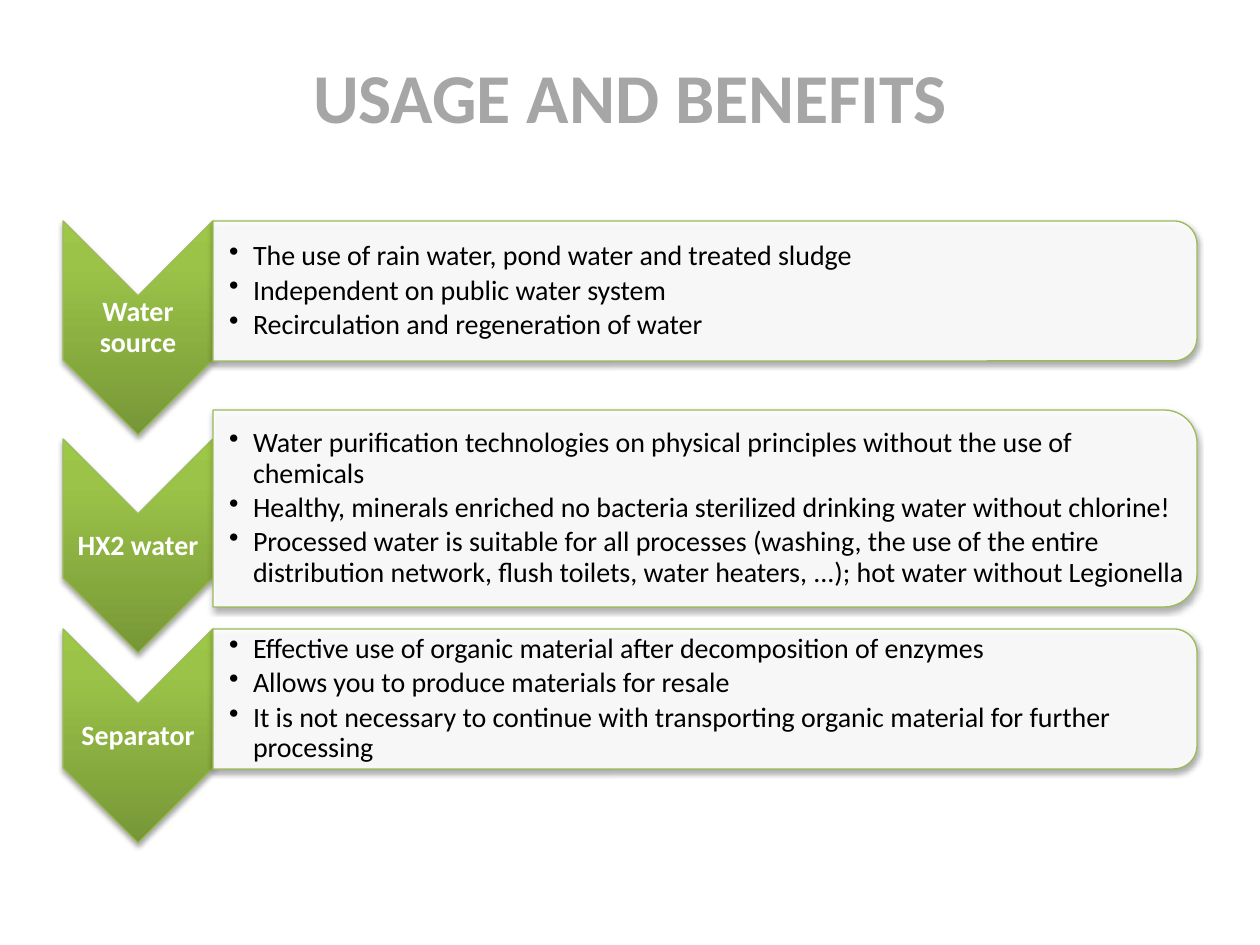
import pptx
import pptx.util
import pptx.dml.color
import pptx.enum.shapes
import pptx.enum.text
import pptx.oxml
import pptx.oxml.ns

RGBColor = pptx.dml.color.RGBColor
MSO_SHAPE = pptx.enum.shapes.MSO_SHAPE
PP_ALIGN = pptx.enum.text.PP_ALIGN
MSO_ANCHOR = pptx.enum.text.MSO_ANCHOR
qn = pptx.oxml.ns.qn
Pt = pptx.util.Pt

GREY = RGBColor(0xA6, 0xA6, 0xA6)
WHITE = RGBColor(0xFF, 0xFF, 0xFF)
BLACK = RGBColor(0x00, 0x00, 0x00)
GREEN = RGBColor(0x9B, 0xBB, 0x59)
GREEN_STOPS = [
    (0, RGBColor(0x77, 0x97, 0x37)),
    (80, RGBColor(0x9B, 0xC3, 0x48)),
    (100, RGBColor(0x9D, 0xC7, 0x46)),
]

PX_PER_INCH = 126
FONT = "Calibri"
NS = pptx.oxml.ns.nsdecls("a")

SHADOW = f"""<a:effectLst {NS}>
  <a:outerShdw blurRad="40000" dist="23000" dir="5400000" rotWithShape="0">
    <a:srgbClr val="{BLACK}"><a:alpha val="35000"/></a:srgbClr>
  </a:outerShdw>
</a:effectLst>"""

GRADIENT = f"""<a:gradFill {NS} rotWithShape="0">
  <a:gsLst>{"".join(
      f'<a:gs pos="{pos * 1000}"><a:srgbClr val="{color}"/></a:gs>'
      for pos, color in GREEN_STOPS)}</a:gsLst>
  <a:lin ang="16200000" scaled="0"/>
</a:gradFill>"""


def px(n):
    return round(n * 914400 / PX_PER_INCH)


class Deck:
    """Holds the style and the current slide."""

    def __init__(self):
        self.prs = pptx.Presentation()
        self.prs.slide_width = px(1260)
        self.prs.slide_height = px(945)
        self.s = self.prs.slides.add_slide(self.prs.slide_layouts[5])

    def font(self, p, size, color, bold=False):
        p.font.name = FONT
        p.font.size = Pt(size)
        p.font.bold = bold
        p.font.color.rgb = color

    def title(self, text, x, y, w, h):
        sp = self.s.shapes.title
        sp.left, sp.top, sp.width, sp.height = px(x), px(y), px(w), px(h)
        sp.text_frame.vertical_anchor = MSO_ANCHOR.MIDDLE
        p = sp.text_frame.paragraphs[0]
        p.text = text
        p.alignment = PP_ALIGN.CENTER
        self.font(p, 40, GREY, bold=True)

    def turned(self, kind, x, y, w, h):
        """Add a shape turned by 90 degrees that covers the given box."""
        sp = self.s.shapes.add_shape(
            kind, px(x + (w - h) / 2), px(y + (h - w) / 2), px(h), px(w))
        sp.rotation = 90
        sp.line.color.rgb = GREEN
        sp.line.width = Pt(0.75)
        sp.shadow.inherit = False
        old = sp._element.spPr.find(qn("a:effectLst"))
        old.getparent().replace(old, pptx.oxml.parse_xml(SHADOW))
        return sp

    def chevron(self, x, y, w, h):
        sp = self.turned(MSO_SHAPE.CHEVRON, x, y, w, h)
        sp.fill.solid()
        solid = sp._element.spPr.find(qn("a:solidFill"))
        solid.getparent().replace(solid, pptx.oxml.parse_xml(GRADIENT))

    def panel(self, x, y, w, h):
        sp = self.turned(MSO_SHAPE.ROUND_2_SAME_RECTANGLE, x, y, w, h)
        sp.fill.solid()
        sp.fill.fore_color.rgb = WHITE
        color = sp._element.spPr.find(qn("a:solidFill"))[0]
        color.append(pptx.oxml.parse_xml(f'<a:alpha {NS} val="90000"/>'))

    def text(self, lines, x, y, w, h, inset, space_after):
        """Add a text box and return its paragraphs."""
        sp = self.s.shapes.add_textbox(px(x), px(y), px(w), px(h))
        tf = sp.text_frame
        tf.word_wrap = True
        tf.vertical_anchor = MSO_ANCHOR.MIDDLE
        tf.margin_left = px(inset)
        tf.margin_right = tf.margin_top = tf.margin_bottom = px(1)
        tf.text = "\n".join(lines)
        for p in tf.paragraphs:
            p.line_spacing = 0.9
            p.space_after = Pt(space_after)
        return tf.paragraphs

    def label(self, text, x, y, w, h):
        for p in self.text([text], x, y, w, h, inset=1, space_after=5.6):
            p.alignment = PP_ALIGN.CENTER
            self.font(p, 16, WHITE, bold=True)

    def bullets(self, lines, x, y, w, h):
        for p in self.text(lines, x, y, w, h, inset=16, space_after=2.4):
            self.font(p, 16, BLACK)
            p.level = 1
            pPr = p._p.get_or_add_pPr()
            pPr.set("marL", str(px(24)))
            pPr.set("indent", str(-px(24)))
            bullet = pptx.oxml.parse_xml(f'<a:buChar {NS} char="•"/>')
            pPr.insert_element_before(bullet, "a:tabLst", "a:defRPr", "a:extLst")


# Label, chevron top, panel top, panel height, bullet lines
ROWS = [
    ("Water source", 221, 221, 140, [
        "The use of rain water, pond water and treated sludge",
        "Independent on public water system",
        "Recirculation and regeneration of water",
    ]),
    ("HX2 water", 439, 410, 197, [
        "Water purification technologies on physical principles without the "
        "use of chemicals",
        "Healthy, minerals enriched no bacteria sterilized drinking water "
        "without chlorine!",
        "Processed water is suitable for all processes (washing, the use of "
        "the entire distribution network, flush toilets, water heaters, ...); "
        "hot water without Legionella",
    ]),
    ("Separator", 629, 629, 140, [
        "Effective use of organic material after decomposition of enzymes",
        "Allows you to produce materials for resale",
        "It is not necessary to continue with transporting organic material "
        "for further processing",
    ]),
]
LEFT, CHEVRON_W, CHEVRON_H, PANEL_W = 63, 150, 214, 984
PANEL_LEFT = LEFT + CHEVRON_W


def main():
    deck = Deck()
    deck.title("USAGE AND BENEFITS", 63, 16, 1134, 158)

    for label, top, panel_top, panel_h, lines in ROWS:
        # Chevron with its label between notch and tip
        deck.chevron(LEFT, top, CHEVRON_W, CHEVRON_H)
        half = CHEVRON_W // 2
        deck.label(label, LEFT, top + half, CHEVRON_W, CHEVRON_H - 2 * half)

        # Panel, with its list kept clear of the rounded corners
        deck.panel(PANEL_LEFT, panel_top, PANEL_W, panel_h)
        gap = round(panel_h * 0.05)
        deck.bullets(lines, PANEL_LEFT, panel_top + gap,
                     PANEL_W - gap, panel_h - 2 * gap)

    deck.prs.save("out.pptx")


if __name__ == "__main__":
    main()
